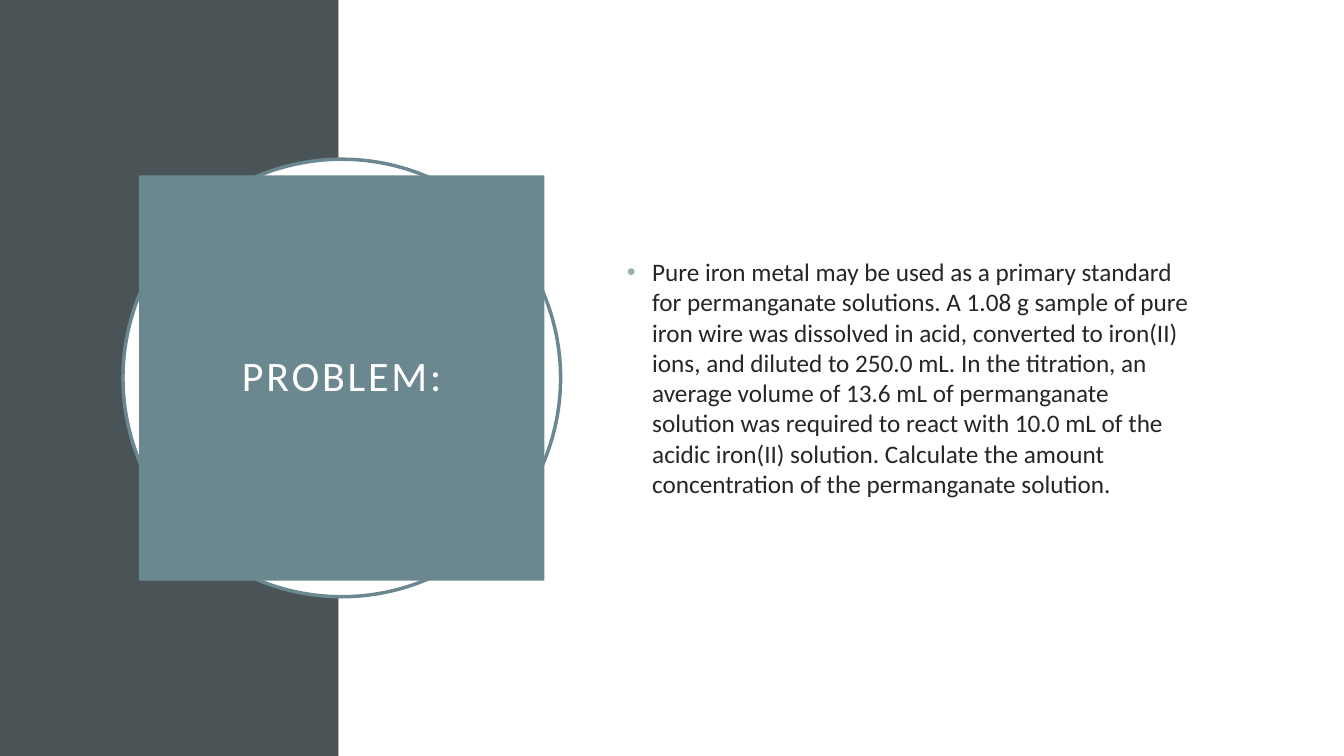
from dataclasses import dataclass

from lxml import etree
from pptx import Presentation
from pptx.dml.color import RGBColor
from pptx.enum.shapes import MSO_SHAPE
from pptx.enum.text import MSO_ANCHOR, PP_ALIGN
from pptx.oxml.ns import qn
from pptx.util import Inches, Pt

RECTANGLE, OVAL = MSO_SHAPE.RECTANGLE, MSO_SHAPE.OVAL
MIDDLE = MSO_ANCHOR.MIDDLE
CENTER, LEFT = PP_ALIGN.CENTER, PP_ALIGN.LEFT


@dataclass(frozen=True)
class Theme:
    font: str = "Calibri"
    dark: str = "4A5356"
    accent: str = "6B8891"
    bullet: str = "9BAFB5"
    text: str = "262626"
    white: str = "FFFFFF"
    title_size: float = 30
    body_size: float = 18
    ring_width: float = 2.5


THEME = Theme()
SLIDE_WIDTH, SLIDE_HEIGHT = 13.33, 7.5
PANEL_WIDTH = 3.36
TITLE = "PROBLEM:"
PROBLEM = (
    "Pure iron metal may be used as a primary standard for permanganate solutions. "
    "A 1.08 g sample of pure iron wire was dissolved in acid, converted to iron(II) ions, "
    "and diluted to 250.0 mL. In the titration, an average volume of 13.6 mL of permanganate "
    "solution was required to react with 10.0 mL of the acidic iron(II) solution. "
    "Calculate the amount concentration of the permanganate solution."
)


def set_attributes(target, values):
    for name, value in values.items():
        setattr(target, name, value)


def add_filled_shape(slide, kind, box, fill, line=None):
    shape = slide.shapes.add_shape(kind, *map(Inches, box))
    shape.shadow.inherit = False
    shape.fill.solid()
    shape.fill.fore_color.rgb = RGBColor.from_string(fill)
    if line:
        shape.line.color.rgb = RGBColor.from_string(line)
        shape.line.width = Pt(THEME.ring_width)
    else:
        shape.line.fill.background()
    return shape


def write_text(shape, text, size, color, frame_format, paragraph_format):
    set_attributes(shape.text_frame, {"word_wrap": True, "vertical_anchor": MIDDLE, **frame_format})
    paragraph = shape.text_frame.paragraphs[0]
    set_attributes(paragraph, paragraph_format)
    run = paragraph.add_run()
    run.text = text
    set_attributes(run.font, {"name": THEME.font, "size": Pt(size)})
    run.font.color.rgb = RGBColor.from_string(color)
    return paragraph, run


def add_background(slide, box):
    """Dark panel on the left, white area on the right."""
    left, top, width, height = box
    add_filled_shape(slide, RECTANGLE, (left, top, PANEL_WIDTH, height), THEME.dark)
    add_filled_shape(
        slide, RECTANGLE, (left + PANEL_WIDTH, top, width - PANEL_WIDTH, height), THEME.white)


def add_title(slide, box, text):
    """Outlined circle with the title block centred on it."""
    add_filled_shape(slide, OVAL, box, THEME.white, THEME.accent)
    left, top, width, height = box
    gap = 0.16
    block = add_filled_shape(
        slide, RECTANGLE, (left + gap, top + gap, width - 2 * gap, height - 2 * gap), THEME.accent)
    margins = {f"margin_{side}": Inches(0.2) for side in ("left", "top", "right", "bottom")}
    _, run = write_text(block, text, THEME.title_size, THEME.white, margins,
                        {"alignment": CENTER, "line_spacing": 0.9})
    # Letter spacing, in hundredths of a point
    run.font._element.set("spc", "200")


def add_body(slide, box, text):
    """Bulleted problem statement."""
    body = slide.shapes.add_textbox(*map(Inches, box))
    paragraph, _ = write_text(body, text, THEME.body_size, THEME.text, {},
                              {"alignment": LEFT, "space_before": Pt(10)})
    # Hanging bullet
    properties = paragraph._p.get_or_add_pPr()
    properties.set("marL", str(Inches(0.25)))
    properties.set("indent", str(-Inches(0.25)))
    bullet_color = etree.SubElement(properties, qn("a:buClr"))
    etree.SubElement(bullet_color, qn("a:srgbClr"), val=THEME.bullet)
    etree.SubElement(properties, qn("a:buFont"), typeface="Arial")
    etree.SubElement(properties, qn("a:buChar"), char="•")


def main():
    presentation = Presentation()
    presentation.slide_width = Inches(SLIDE_WIDTH)
    presentation.slide_height = Inches(SLIDE_HEIGHT)
    slide = presentation.slides.add_slide(presentation.slide_layouts[6])
    add_background(slide, (0, 0, SLIDE_WIDTH, SLIDE_HEIGHT))
    add_title(slide, (1.22, 1.58, 4.34, 4.34), TITLE)
    add_body(slide, (6.12, 1.53, 5.82, 4.43), PROBLEM)
    presentation.save("out.pptx")


if __name__ == "__main__":
    main()
